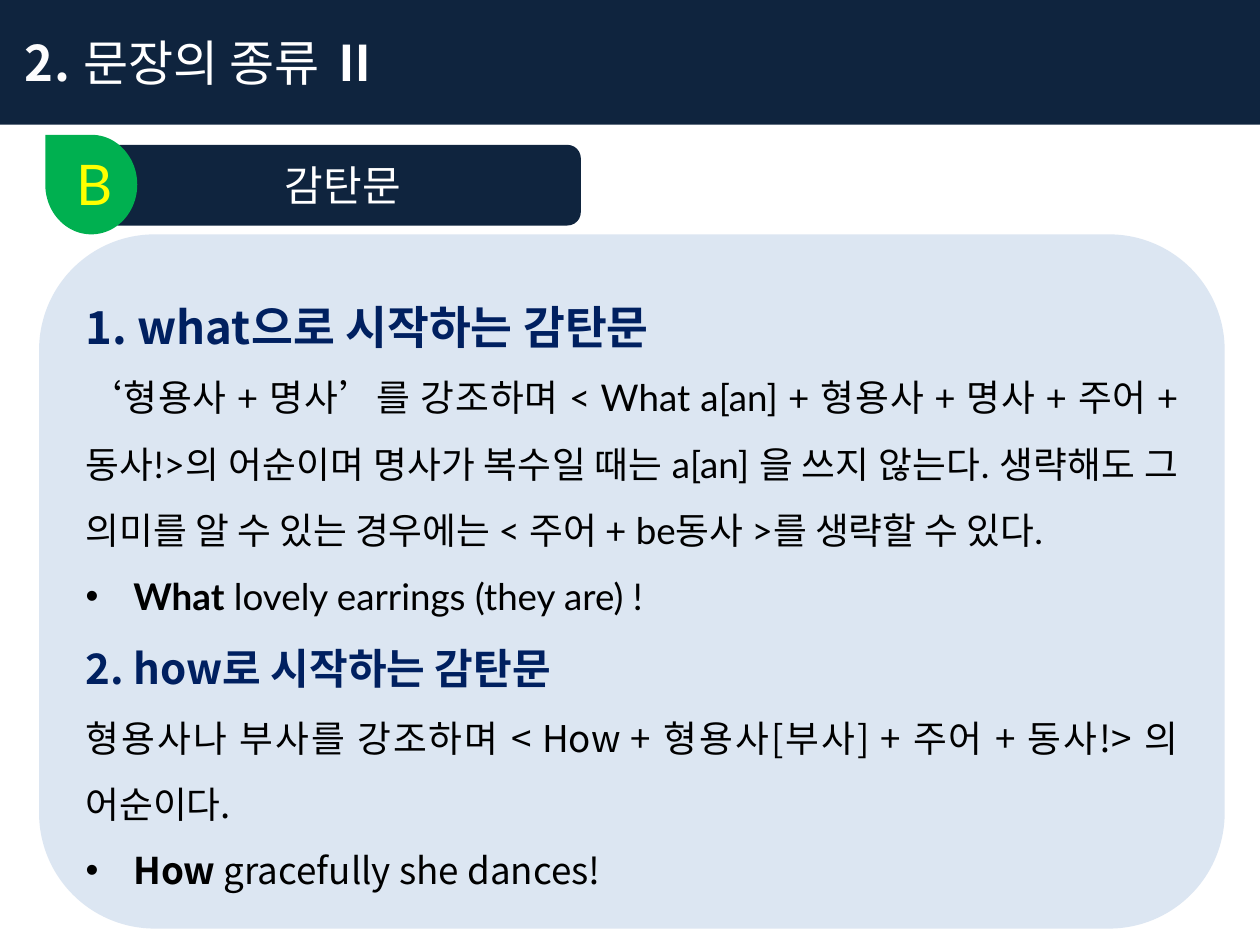
from pptx import Presentation
from pptx.dml.color import RGBColor
from pptx.enum.shapes import MSO_SHAPE as SHAPE
from pptx.enum.text import MSO_ANCHOR as ANCHOR, MSO_AUTO_SIZE as AUTO, PP_ALIGN as ALIGN
from pptx.oxml import parse_xml
from pptx.oxml.ns import nsdecls, qn
from pptx.util import Inches, Pt

NAVY, INK, PANEL, GREEN = "0F243E", "002060", "DCE6F2", "00B050"
WHITE, YELLOW, BLACK = "FFFFFF", "FFFF00", "000000"
KOREAN, LATIN = "Noto Sans CJK KR", "Lato"


def rgb(value):
    """Turn a hex string into a colour."""
    return RGBColor.from_string(value)


def write(p, text, size=21, font=KOREAN, color=BLACK, bold=False, spacing=0):
    """Add a formatted run to a paragraph."""
    r = p.add_run()
    r.text = text
    r.font.size, r.font.name, r.font.bold = Pt(size), font, bold
    r.font.color.rgb = rgb(color)
    rPr = r.font._element
    rPr.set("spc", str(spacing))
    rPr.find(qn("a:latin")).addnext(
        parse_xml(f'<a:ea {nsdecls("a")} typeface="{KOREAN}"/>'))


class Deck:
    """Hold the grid, the style and the current slide."""

    def __init__(self, cols=100, rows=75):
        """Open a 10 by 7.5 inch deck with one title and content slide."""
        self.prs = Presentation()
        self.prs.slide_width, self.prs.slide_height = Inches(10), Inches(7.5)
        self.col = self.prs.slide_width / cols
        self.row = self.prs.slide_height / rows
        self.s = self.prs.slides.add_slide(self.prs.slide_layouts[1])

    def box(self, x, y, w, h):
        """Convert grid units to lengths."""
        return [round(n * unit) for n, unit in
                zip((x, y, w, h), (self.col, self.row) * 2)]

    def shape(self, kind, at, fill, rotation=0):
        """Add a filled shape without line or shadow."""
        sp = self.s.shapes.add_shape(kind, *self.box(*at))
        sp.fill.solid()
        sp.fill.fore_color.rgb = rgb(fill)
        sp.line.fill.background()
        sp.shadow.inherit = False
        sp.rotation = rotation
        return sp

    def text(self, at, text, **style):
        """Add a text box with one line."""
        tf = self.s.shapes.add_textbox(*self.box(*at)).text_frame
        write(tf.paragraphs[0], text, **style)

    def placeholder(self, index, at, fill, geometry="rect"):
        """Move a placeholder, give it an outline and fill, and return its frame."""
        sp = self.s.placeholders[index]
        sp.left, sp.top, sp.width, sp.height = self.box(*at)
        sp._element.spPr.append(parse_xml(
            f'<a:prstGeom {nsdecls("a")} prst="{geometry}"><a:avLst/></a:prstGeom>'))
        sp.fill.solid()
        sp.fill.fore_color.rgb = rgb(fill)
        tf = sp.text_frame
        tf.auto_size, tf.vertical_anchor, tf.word_wrap = AUTO.NONE, ANCHOR.MIDDLE, True
        return tf

    def paragraph(self, p, runs, bullet=False):
        """Fill a justified body paragraph, with a hanging bullet if wanted."""
        p.alignment, p.line_spacing, p.space_before = ALIGN.JUSTIFY, 1.5, Pt(0)
        indent = Inches(0.38) if bullet else 0
        pPr = p._p.get_or_add_pPr()
        pPr.set("marL", str(indent))
        pPr.set("indent", str(-indent))
        if bullet:
            pPr.append(parse_xml(f'<a:buFont {nsdecls("a")} typeface="Arial"/>'))
        mark = 'buChar char="•"' if bullet else "buNone"
        pPr.append(parse_xml(f'<a:{mark} {nsdecls("a")}/>'))
        for text, style in runs:
            write(p, text, **style)


def main():
    """Build the lesson slide."""
    deck = Deck()
    p = deck.placeholder(0, (0, 0, 100, 9.9), NAVY).paragraphs[0]
    p.alignment = ALIGN.LEFT
    write(p, " 2. ", size=28, color="FCFCFD", bold=True, spacing=50)
    write(p, "문장의 종류 ", size=28, color=WHITE)
    write(p, "Ⅱ", size=28, color=WHITE, bold=True)

    label = deck.shape(SHAPE.FLOWCHART_ALTERNATE_PROCESS, (8.3, 11.5, 37.8, 6.4), NAVY)
    label.text_frame.vertical_anchor = ANCHOR.MIDDLE
    p = label.text_frame.paragraphs[0]
    p.alignment = ALIGN.CENTER
    write(p, "감탄문", size=24, color=WHITE)
    deck.shape(SHAPE.TEAR, (3.3, 11, 7.9, 7.3), GREEN, rotation=270)
    deck.text((5.1, 11.4, 4.7, 6.4), "B", size=32, font=LATIN, color=YELLOW)

    heading = {"color": INK, "bold": True}
    latin = {"font": LATIN}
    lesson = [
        ([("1. what으로 시작하는 감탄문", {**heading, "size": 26})], False),
        ([("‘형용사 + 명사’를 강조하며 < What a[an] + 형용사 + 명사 + 주어 + 동사!>의 "
           "어순이며 명사가 복수일 때는 a[an] 을 쓰지 않는다. 생략해도 그 의미를 알 수 있는 "
           "경우에는 < 주어 + be동사 >를 생략할 수 있다.", latin)], False),
        ([("What", {**latin, "bold": True}),
          (" lovely earrings (they are) !", latin)], True),
        ([("2. how로 시작하는 감탄문", {**heading, "size": 24})], False),
        ([("형용사나 부사를 강조하며 < How + 형용사[부사] + 주어 + 동사!> 의 어순이다.", {})],
         False),
        ([("How", {"bold": True}), (" gracefully she dances!", {})], True),
    ]
    tf = deck.placeholder(1, (3.1, 18.6, 94.1, 55.1), PANEL, "flowChartAlternateProcess")
    for i, (runs, bullet) in enumerate(lesson):
        deck.paragraph(tf.add_paragraph() if i else tf.paragraphs[0], runs, bullet)

    deck.prs.save("out.pptx")


if __name__ == "__main__":
    main()
